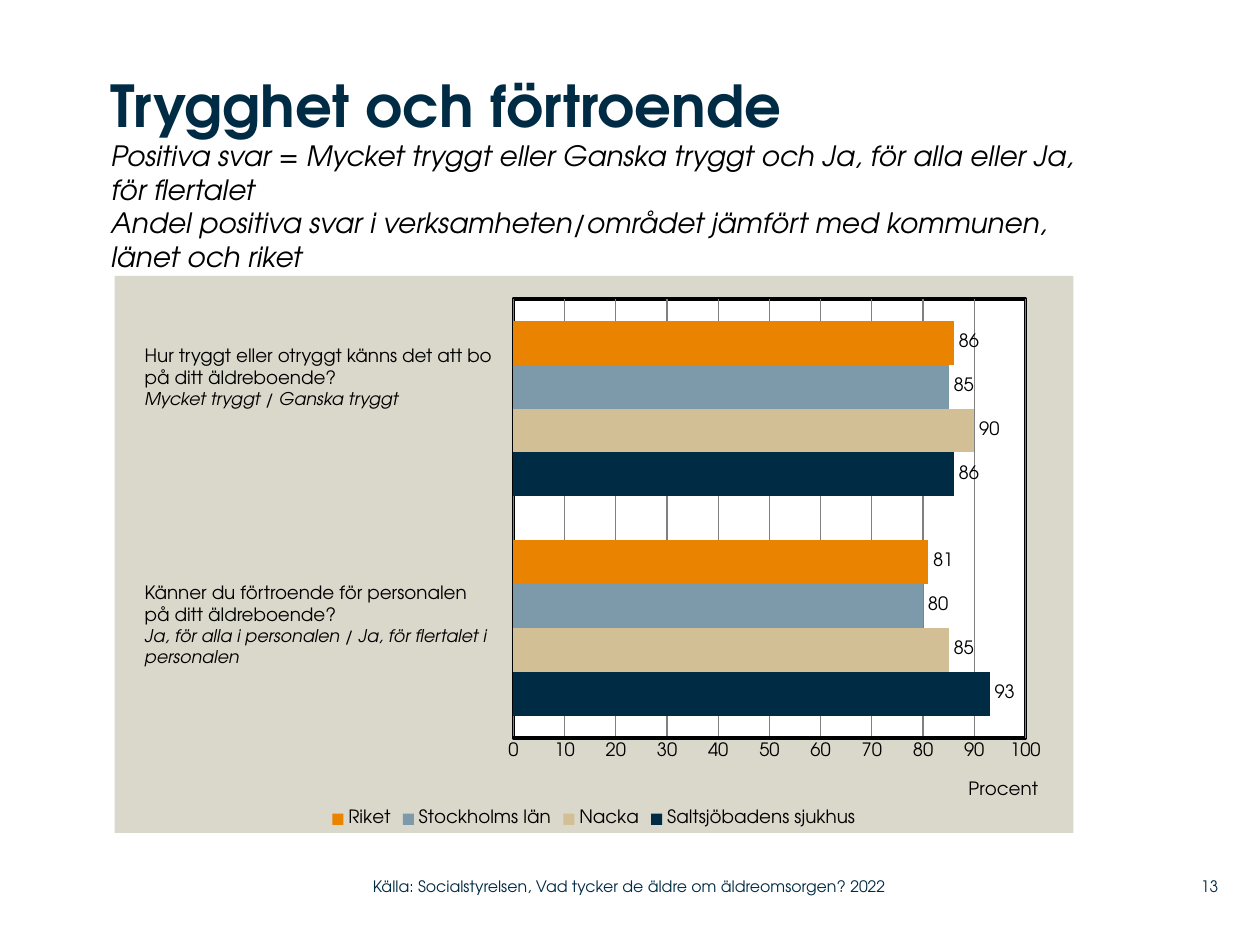
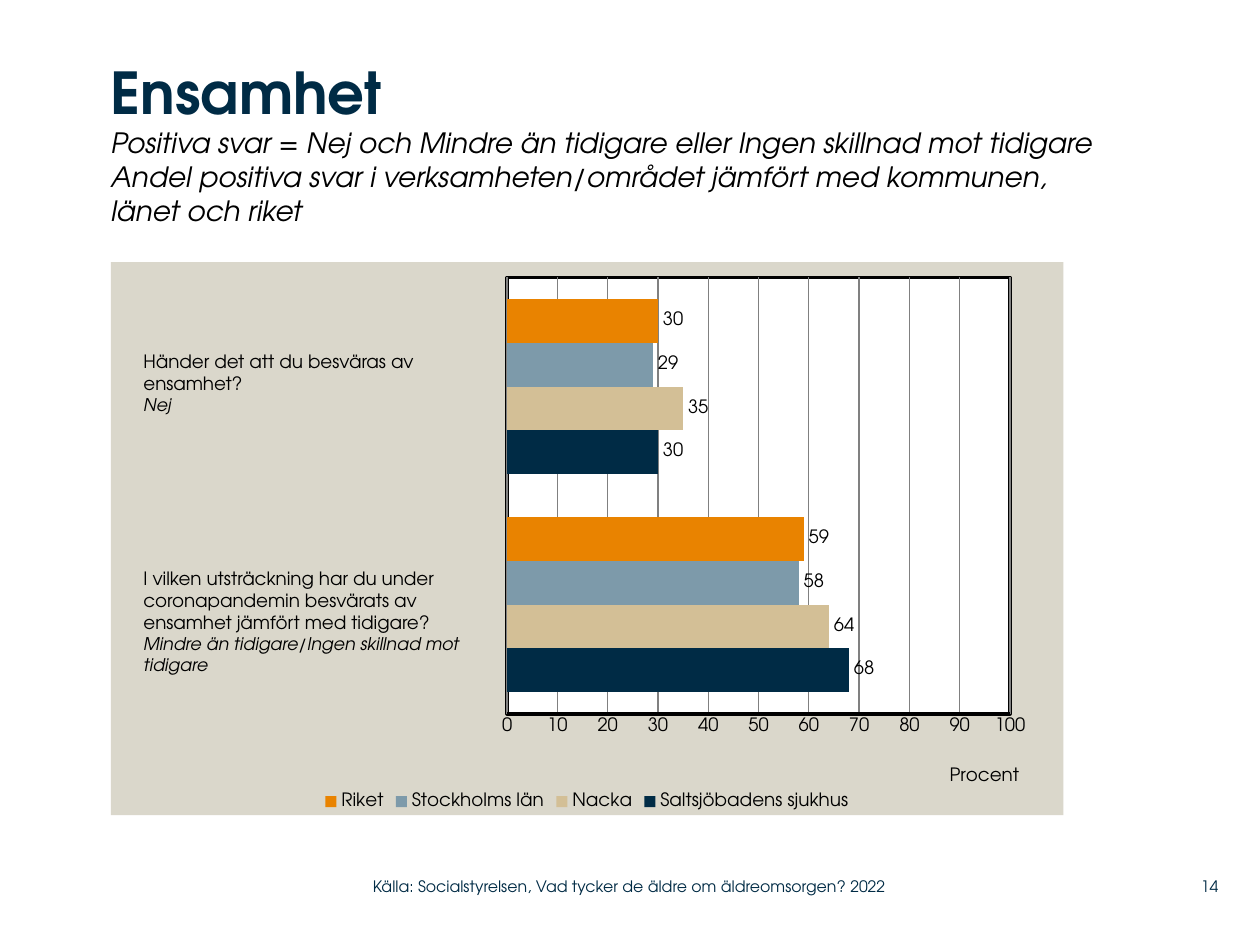
import copy

import pptx
import pptx.chart.data
import pptx.dml.color
import pptx.enum.chart
import pptx.enum.text
import pptx.oxml
import pptx.oxml.ns
import pptx.util

Inches = pptx.util.Inches
Pt = pptx.util.Pt
qn = pptx.oxml.ns.qn
FONT = "TeX Gyre Adventor"
COLORS = {
    "navy": "002B45", "sand": "D3BF96", "steel": "7D9AAA", "orange": "E98300",
    "panel": "DAD7CB", "white": "FFFFFF", "black": "000000", "grid": "808080",
}
SERIES = [("Saltsjöbadens sjukhus", "navy"), ("Nacka", "sand"),
          ("Stockholms län", "steel"), ("Riket", "orange")]
SOURCE = "Källa: Socialstyrelsen, Vad tycker de äldre om äldreomsorgen? 2022"
BODY = {"size": 10.5}
ANSWER = {"size": 10, "italic": True}


def tint(name):
    return pptx.dml.color.RGBColor.from_string(COLORS[name])


def style(font, size, color="black", bold=False, italic=False):
    font.name = FONT
    font.size = Pt(size)
    font.bold = bold
    font.italic = italic
    font.color.rgb = tint(color)


def write(para, text, **form):
    for i, part in enumerate(text.split("\n")):
        if i:
            para.add_line_break()
            gap = para._p[-1]
        run = para.add_run()
        run.text = part
        style(run.font, **form)
        if i:
            gap.append(copy.deepcopy(run._r.rPr))


def place(shape, area):
    shape.left, shape.top, shape.width, shape.height = map(Inches, area)


def clear(frame):
    frame.word_wrap = True
    frame.margin_left = frame.margin_right = 0
    frame.margin_top = frame.margin_bottom = 0


def add_title(slide, area, head, note):
    title = slide.shapes.title
    place(title, area)
    frame = title.text_frame
    clear(frame)
    frame.auto_size = pptx.enum.text.MSO_AUTO_SIZE.NONE
    frame.vertical_anchor = pptx.enum.text.MSO_ANCHOR.TOP
    para = frame.paragraphs[0]
    para.alignment = pptx.enum.text.PP_ALIGN.LEFT
    write(para, head, size=33, color="navy", bold=True)
    write(para, "\n" + note, size=16, italic=True)


def add_label(slide, area, lines, answer):
    frame = slide.shapes.add_textbox(*map(Inches, area)).text_frame
    frame.word_wrap = True
    frame.auto_size = pptx.enum.text.MSO_AUTO_SIZE.SHAPE_TO_FIT_TEXT
    write(frame.paragraphs[0], lines[0], **BODY)
    for line in lines[1:]:
        write(frame.add_paragraph(), line, **BODY)
    write(frame.add_paragraph(), answer, **ANSWER)


def add_foot(slide, area, text, align):
    frame = slide.shapes.add_textbox(*map(Inches, area)).text_frame
    clear(frame)
    frame.vertical_anchor = pptx.enum.text.MSO_ANCHOR.MIDDLE
    para = frame.paragraphs[0]
    para.alignment = align
    write(para, text, size=9, color="navy")


def make_fill(color, line=None):
    edge = (f'<a:ln w="{Pt(2)}"><a:solidFill><a:srgbClr val="{COLORS[line]}"/>'
            '</a:solidFill></a:ln>' if line else '<a:ln><a:noFill/></a:ln>')
    return pptx.oxml.parse_xml(
        f'<c:spPr {pptx.oxml.ns.nsdecls("c", "a")}><a:solidFill>'
        f'<a:srgbClr val="{COLORS[color]}"/></a:solidFill>{edge}</c:spPr>')


def pin(parent, index, **spots):
    old = parent.find(qn("c:layout"))
    if old is not None:
        parent.remove(old)
    inner = '<c:layoutTarget val="inner"/>' if "w" in spots else ""
    modes = "".join(f'<c:{key}Mode val="edge"/>' for key in "xy")
    sizes = "".join(f'<c:{key} val="{val}"/>' for key, val in spots.items())
    parent.insert(index, pptx.oxml.parse_xml(
        f'<c:layout {pptx.oxml.ns.nsdecls("c")}><c:manualLayout>'
        f'{inner}{modes}{sizes}</c:manualLayout></c:layout>'))


def add_bars(slide, area, values, plot_box, unit_at):
    data = pptx.chart.data.CategoryChartData()
    data.categories = ["1", "2"]
    for (name, _), row in zip(SERIES, values):
        data.add_series(name, row)
    kind = pptx.enum.chart.XL_CHART_TYPE.BAR_CLUSTERED
    chart = slide.shapes.add_chart(kind, *map(Inches, area), data).chart
    style(chart.font, 10.5)
    chart.has_title = False
    chart.has_legend = True
    chart.legend.position = pptx.enum.chart.XL_LEGEND_POSITION.BOTTOM
    chart.legend.include_in_layout = False
    style(chart.legend.font, 10.5)

    plot = chart.plots[0]
    plot.gap_width = 100
    plot.vary_by_categories = False
    for bars, (_, color) in zip(plot.series, SERIES):
        bars.format.fill.solid()
        bars.format.fill.fore_color.rgb = tint(color)
        labels = bars.data_labels
        labels.show_value = True
        labels.position = pptx.enum.chart.XL_LABEL_POSITION.OUTSIDE_END
        style(labels.font, 10.5)

    chart.category_axis.visible = False
    axis = chart.value_axis
    axis.minimum_scale, axis.maximum_scale, axis.major_unit = 0, 100, 10
    axis.major_tick_mark = pptx.enum.chart.XL_TICK_MARK.NONE
    axis.format.line.color.rgb = tint("black")
    axis.format.line.width = Pt(2)
    axis.has_major_gridlines = True
    grid = axis.major_gridlines.format.line
    grid.color.rgb = tint("grid")
    grid.width = Pt(0.75)
    style(axis.tick_labels.font, 10.5)
    write(axis.axis_title.text_frame.paragraphs[0], "Procent", **BODY)
    pin(axis.axis_title._element, 1, **dict(zip("xy", unit_at)))

    root = chart._chartSpace
    pane = root.chart.plotArea
    pin(pane, 0, **dict(zip("xywh", plot_box)))
    pane.append(make_fill("white", "black"))
    root.chart.addnext(make_fill("panel"))


def add_page(deck, number, title, bars, labels):
    slide = deck.slides.add_slide(deck.slide_layouts[5])
    add_title(slide, *title)
    add_bars(slide, *bars)
    for label in labels:
        add_label(slide, *label)
    align = pptx.enum.text.PP_ALIGN
    add_foot(slide, (2.96, 6.89, 4.43, 0.29), SOURCE, align.LEFT)
    add_foot(slide, (9.2, 6.89, 0.47, 0.29), str(number), align.RIGHT)


def main():
    deck = pptx.Presentation()
    deck.slide_width, deck.slide_height = Inches(10), Inches(7.5)
    add_page(
        deck, 13,
        ((0.88, 0.55, 7.75, 1.64), "Trygghet och förtroende",
         "Positiva svar = Mycket tryggt eller Ganska tryggt och Ja, för alla "
         "eller Ja, för flertalet\nAndel positiva svar i verksamheten/området "
         "jämfört med kommunen, länet och riket"),
        ((0.91, 2.19, 7.61, 4.42), [(93, 86), (85, 90), (80, 85), (81, 86)],
         (0.416, 0.041, 0.534, 0.789), (0.887, 0.9)),
        [((1.05, 2.68, 2.98, 0.81),
          ["Hur tryggt eller otryggt känns det att bo på ditt äldreboende?"],
          "Mycket tryggt / Ganska tryggt"),
         ((1.05, 4.56, 3, 0.98),
          ["Känner du förtroende för personalen", "på ditt äldreboende?"],
          "Ja, för alla i personalen / Ja, för flertalet i personalen")])
    add_page(
        deck, 14,
        ((0.88, 0.45, 7.81, 1.64), "Ensamhet",
         "Positiva svar = Nej och Mindre än tidigare eller Ingen skillnad mot "
         "tidigare\nAndel positiva svar i verksamheten/området jämfört med "
         "kommunen, länet och riket"),
        ((0.88, 2.08, 7.56, 4.39), [(68, 30), (64, 35), (58, 29), (59, 30)],
         (0.416, 0.028, 0.528, 0.789), (0.877, 0.905)),
        [((1.04, 4.45, 2.94, 0.97),
          ["I vilken utsträckning har du under coronapandemin besvärats av "
           "ensamhet jämfört med tidigare?"],
          "Mindre än tidigare/Ingen skillnad mot tidigare"),
         ((1.04, 2.73, 2.94, 0.63),
          ["Händer det att du besväras av", "ensamhet?"], "Nej")])
    deck.save("out.pptx")


if __name__ == "__main__":
    main()
